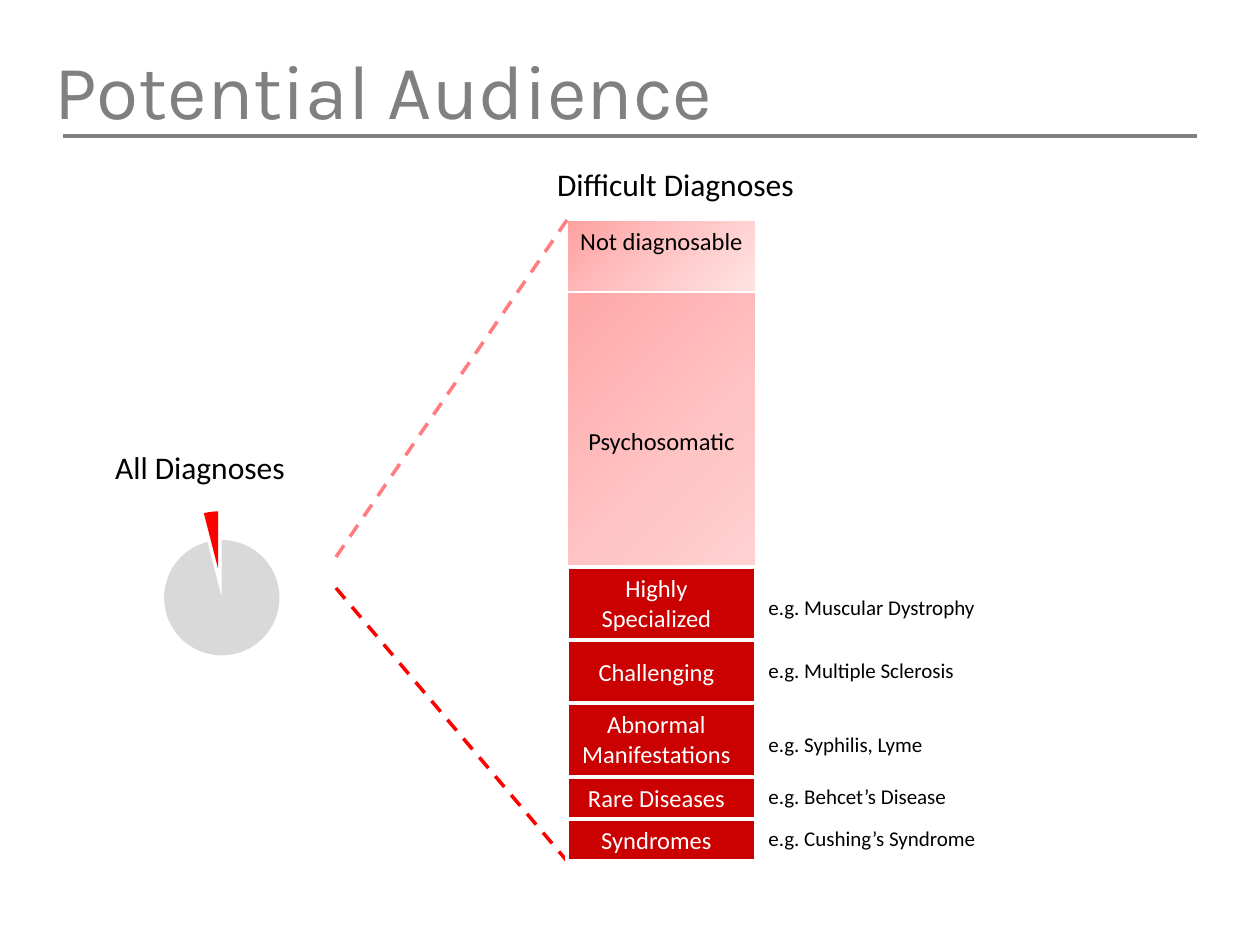
from copy import deepcopy

from pptx import Presentation
from pptx.chart.data import CategoryChartData as ChartData
from pptx.dml.color import RGBColor as Rgb
from pptx.enum.chart import XL_CHART_TYPE as Chart
from pptx.enum.dml import MSO_LINE_DASH_STYLE as Dash
from pptx.enum.shapes import MSO_CONNECTOR as Conn, MSO_SHAPE as Shape
from pptx.enum.text import MSO_ANCHOR as Anchor, PP_ALIGN as Align
from pptx.oxml import parse_xml
from pptx.oxml.ns import nsdecls, qn
from pptx.util import Pt

SCALE = 914400 // 126  # EMU in one px
COLORS = {
    "gray": "808080", "pale": "D9D9D9", "tan": "D8BEA0", "sand": "ECE2D9",
    "red": "FF0000", "pink": "FF7C80", "deep": "CB0000",
    "black": "000000", "white": "FFFFFF",
}
FADE = [(0, "FFA0A0"), (0.5, "FFC5C5"), (1, "FFE3E3")]

# Stacked bar: left edge, width, top, top of the red part
LEFT, WIDE, TOP, SPLIT = 567, 189, 220, 567
# Red parts: height, label, label offset, example, example offset
PARTS = [
    (73, "Highly Specialized", 0, "e.g. Muscular Dystrophy", 21),
    (63, "Challenging", 11, "e.g. Multiple Sclerosis", 11),
    (74, "Abnormal Manifestations", 0, "e.g. Syphilis, Lyme", 22),
    (42, "Rare Diseases", 0, "e.g. Behcet’s Disease", 0),
    (42, "Syndromes", 0, "e.g. Cushing’s Syndrome", 0),
]


def px(*vals):
    return [val * SCALE for val in vals]


def rgb(name):
    return Rgb.from_string(COLORS[name])


def put(obj, vals):
    for name, val in vals.items():
        setattr(obj, name, val)


def write(shape, text, size, color="black", align=Align.CENTER,
          font="Calibri", anchor=Anchor.TOP):
    frame = shape.text_frame
    put(frame, {"word_wrap": True, "vertical_anchor": anchor})
    para = frame.paragraphs[0]
    para.alignment = align
    run = para.add_run()
    run.text = text
    put(run.font, {"name": font, "size": Pt(size)})
    run.font.color.rgb = rgb(color)


def label(slide, box, text, size, **style):
    write(slide.shapes.add_textbox(*px(*box)), text, size, **style)


def fade(fill):
    fill.gradient()
    fill.gradient_angle = 315
    stops = fill.gradient_stops
    first = stops[0]._gs
    first.addnext(deepcopy(first))
    for stop, (pos, color) in zip(fill.gradient_stops, FADE):
        stop.position = pos
        stop.color.rgb = Rgb.from_string(color)


def block(slide, top, high, width, color=None):
    shape = slide.shapes.add_shape(Shape.RECTANGLE, *px(LEFT, top, WIDE, high))
    shape.shadow.inherit = False
    if color:
        shape.fill.solid()
        shape.fill.fore_color.rgb = rgb(color)
    else:
        fade(shape.fill)
    shape.line.color.rgb = rgb("white")
    shape.line.width = Pt(width)
    return shape


def line(slide, ends, color, dash=None):
    conn = slide.shapes.add_connector(Conn.STRAIGHT, *px(*ends))
    conn.line.color.rgb = rgb(color)
    put(conn.line, {"width": Pt(2), "dash_style": dash})
    conn._element.spPr.append(parse_xml(f"<a:effectLst {nsdecls('a')}/>"))


def pie(slide, box):
    data = ChartData()
    data.categories = ["1", "2", "3", "4"]
    data.add_series("Series 1", (96, None, None, 4))
    chart = slide.shapes.add_chart(Chart.PIE, *px(*box), data).chart
    put(chart, {"has_legend": False, "has_title": False})
    put(chart.font, {"name": "Times New Roman", "size": Pt(18)})
    chart.font.color.rgb = rgb("black")
    plot = chart.plots[0]
    plot.vary_by_categories = True
    series = plot.series[0]
    for idx, color in enumerate(["pale", "tan", "sand", "red"]):
        form = series.points[idx].format
        form.fill.solid()
        form.fill.fore_color.rgb = rgb(color)
        form.line.fill.background()

    # Pull the slices apart
    burst = parse_xml(f'<c:explosion {nsdecls("c")} val="25"/>')
    ser = series._element
    for part in ser.iter(qn("c:spPr")):
        part.addprevious(deepcopy(burst))
    ser.find(qn("c:tx")).addnext(burst)


def main():
    prs = Presentation()
    prs.slide_width, prs.slide_height = px(1260, 945)
    slide = prs.slides.add_slide(prs.slide_layouts[6])

    # Title and rule
    line(slide, (63, 136, 1197, 136), "gray")
    label(slide, (42, 10, 1187, 158), "Potential Audience", 44, color="gray",
          align=Align.LEFT, font="Karla", anchor=Anchor.MIDDLE)

    # Pale parts of the bar
    base = SPLIT + sum(part[0] for part in PARTS)
    block(slide, TOP, 557, 0.75)
    write(block(slide, TOP, 72, 0.75), "Not diagnosable", 14)
    label(slide, (LEFT, 420, WIDE, 43), "Psychosomatic", 14)

    # Dashed lines from pie to bar
    line(slide, (336, 588, LEFT, base), "red", Dash.DASH)
    line(slide, (336, 557, LEFT, TOP), "pink", Dash.DASH)

    # Red parts with examples
    top = SPLIT
    for high, name, drop, sample, shift in PARTS:
        block(slide, top, high, 2.25, "deep")
        label(slide, (557, top + drop, 199, 43), name, 14, color="white")
        label(slide, (756, top + shift, 294, 38), sample, 12, align=Align.LEFT)
        top += high

    # Headings and pie
    label(slide, (53, 442, 294, 50), "All Diagnoses", 18)
    label(slide, (522, 159, 307, 50), "Difficult Diagnoses", 18)
    pie(slide, (73, 494, 294, 179))

    prs.save("out.pptx")


if __name__ == "__main__":
    main()
